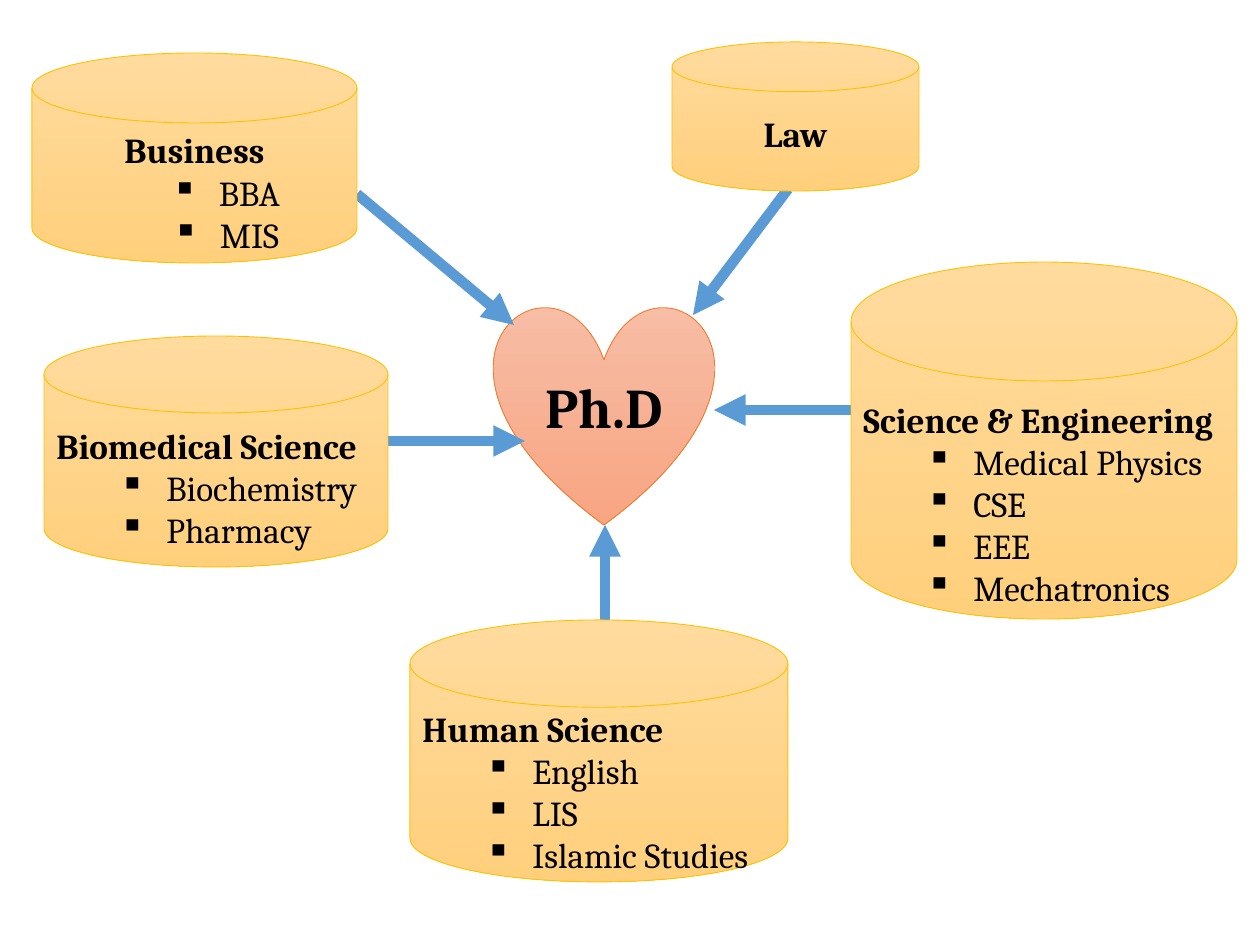
from lxml import etree
from pptx import Presentation
from pptx import util as u
from pptx.dml.color import RGBColor
from pptx.enum import shapes, text
from pptx.oxml.ns import qn

PX = 914400 / 126
FONT = "Cambria"
COLORS = {
    "heart_top": "F7BDA5", "heart_bottom": "F8A582", "heart_line": "ED7D31",
    "faculty_top": "FFDB9E", "faculty_bottom": "FFD07C", "faculty_line": "FFC000",
    "arrow": "5B9BD5", "text": "000000",
}
LEFT, CENTER, JUSTIFY = text.PP_ALIGN.LEFT, text.PP_ALIGN.CENTER, text.PP_ALIGN.JUSTIFY


def add_shaded(kind, box, name):
    """Add a preset shape with the top-to-bottom gradient and outline of a colour family."""
    shape = slide.shapes.add_shape(kind, *(round(v * PX) for v in box))
    shape.shadow.inherit = False
    shape.fill.gradient()
    shape.fill.gradient_angle = 270
    for stop, end in zip(shape.fill.gradient_stops, ("top", "bottom")):
        stop.color.rgb = RGBColor.from_string(COLORS[f"{name}_{end}"])
    shape.line.color.rgb = RGBColor.from_string(COLORS[f"{name}_line"])
    shape.line.width = u.Pt(0.5)
    shape.text_frame.word_wrap = True
    return shape


def write(paragraph, words, size, bold, align):
    paragraph.text = words
    paragraph.alignment = align
    font = paragraph.runs[0].font
    font.name, font.size, font.bold = FONT, u.Pt(size), bold
    font.color.rgb = RGBColor.from_string(COLORS["text"])


deck = Presentation()
deck.slide_width, deck.slide_height = u.Inches(10), u.Inches(7.5)
slide = deck.slides.add_slide(deck.slide_layouts[6])

degree = add_shaded(shapes.MSO_SHAPE.HEART, (494, 305, 220, 220), "heart")
degree.text_frame.vertical_anchor = text.MSO_ANCHOR.MIDDLE
write(degree.text_frame.paragraphs[0], "Ph.D", 32, True, CENTER)

routes = [
    (357, 194, 514, 325),
    (788, 189, 693, 315),
    (388, 441, 525, 441),
    (851, 410, 714, 410),
    (605, 683, 605, 525),
]
for route in routes:
    arrow = slide.shapes.add_connector(
        shapes.MSO_CONNECTOR.STRAIGHT, *(round(v * PX) for v in route))
    arrow.line.color.rgb = RGBColor.from_string(COLORS["arrow"])
    arrow.line.width = u.Pt(6)
    etree.SubElement(arrow.line._get_or_add_ln(), qn("a:tailEnd"), type="triangle")
    etree.SubElement(arrow._element.spPr, qn("a:effectLst"))

# box, space between lid and title, title, title alignment, programmes, their alignment
faculties = [
    ((44, 336, 344, 231), 11, "Biomedical Science", LEFT,
     ["Biochemistry", "Pharmacy"], JUSTIFY),
    ((32, 53, 325, 210), 6, "Business", CENTER, ["BBA", "MIS"], CENTER),
    ((672, 42, 247, 149), 21, "Law", CENTER, [], CENTER),
    ((851, 262, 386, 357), 17, "Science & Engineering", LEFT,
     ["Medical Physics", "CSE", "EEE", "Mechatronics"], LEFT),
    ((410, 620, 378, 262), 0, "Human Science", LEFT,
     ["English", "LIS", "Islamic Studies"], LEFT),
]
for box, gap, title, title_align, programmes, align in faculties:
    faculty = add_shaded(shapes.MSO_SHAPE.FLOWCHART_MAGNETIC_DISK, box, "faculty")
    frame = faculty.text_frame
    frame.vertical_anchor = text.MSO_ANCHOR.TOP
    frame.margin_top, frame.margin_bottom = round(gap * PX), 0
    write(frame.paragraphs[0], title, 20, True, title_align)
    for programme in programmes:
        item = frame.add_paragraph()
        write(item, programme, 20, False, align)
        item.level = 1
        props = item._p.get_or_add_pPr()
        props.set("marL", str(round(110 * PX)))
        props.set("indent", str(round(-47 * PX)))
        etree.SubElement(props, qn("a:buChar"), char="▪")

deck.save("out.pptx")
